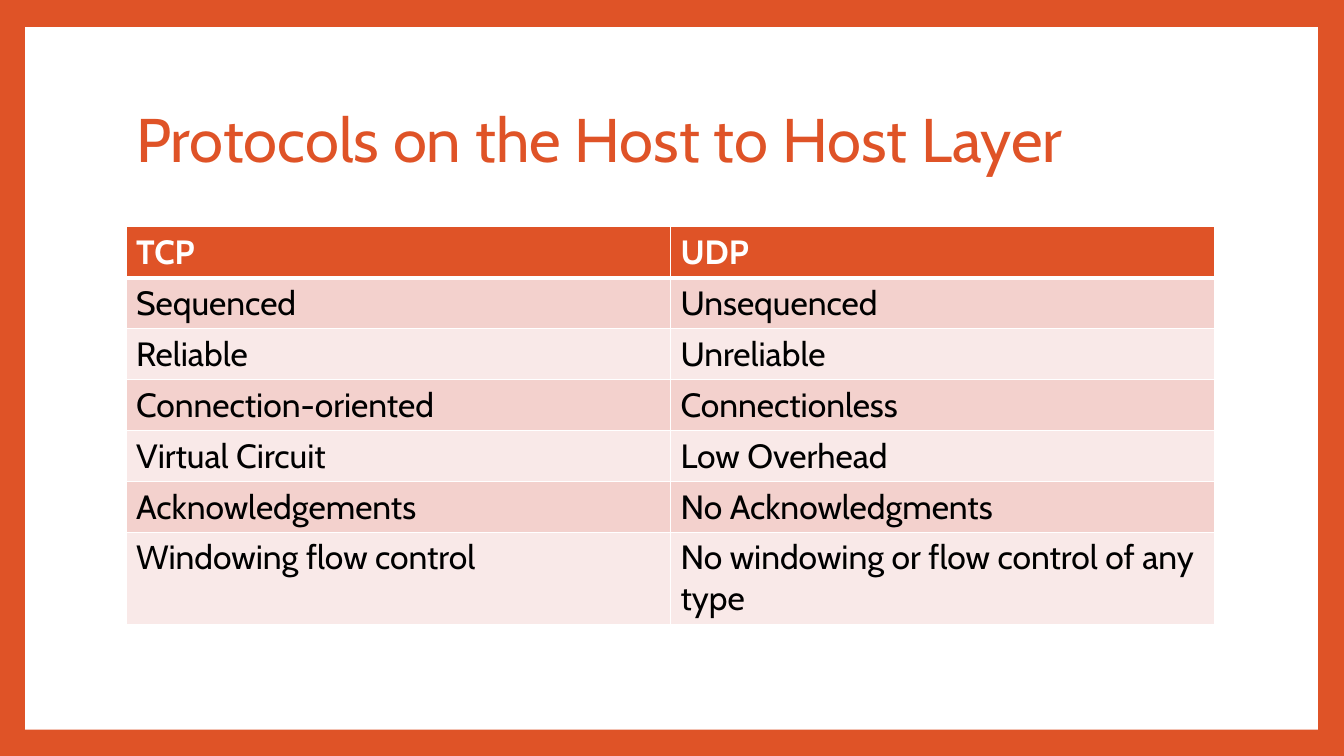
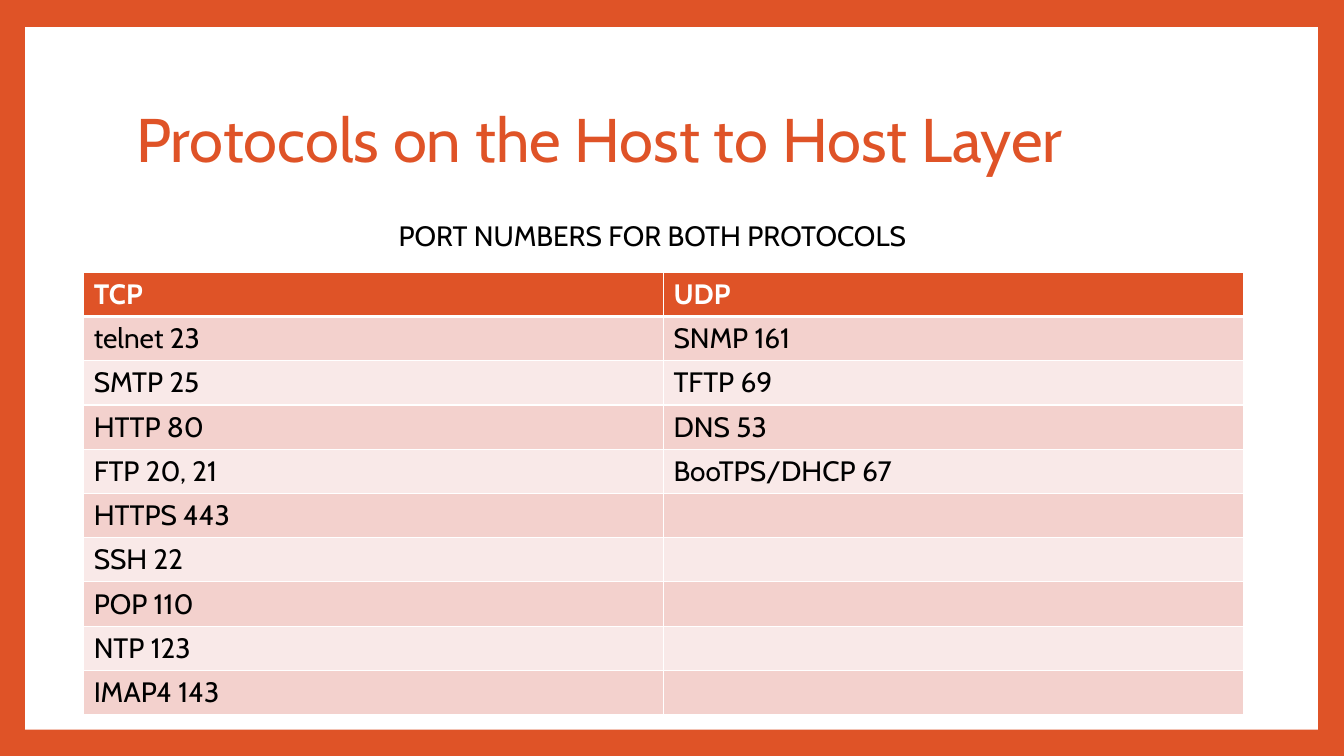
from dataclasses import dataclass
from typing import Optional

from lxml.etree import SubElement
from pptx import Presentation
from pptx.dml.color import RGBColor
from pptx.enum.shapes import MSO_SHAPE
from pptx.enum.text import MSO_ANCHOR, PP_ALIGN
from pptx.oxml.ns import qn
from pptx.util import Inches, Pt

FONT = "Cabin"
ORANGE, WHITE, BLACK = "DF5327", "FFFFFF", "000000"
BANDS = ("F3D1CD", "F9E9E8")
TITLE = "Protocols on the Host to Host Layer"


@dataclass(frozen=True)
class ProtocolTable:
    left: float
    top: float
    col_width: float
    row_height: float
    size: int
    rows: tuple[tuple[str, str], ...]
    caption: Optional[str] = None


TABLES = (
    ProtocolTable(1.25, 2.25, 5.4, 0.5, 24, (
        ("TCP", "UDP"),
        ("Sequenced", "Unsequenced"),
        ("Reliable", "Unreliable"),
        ("Connection-oriented", "Connectionless"),
        ("Virtual Circuit", "Low Overhead"),
        ("Acknowledgements", "No Acknowledgments"),
        ("Windowing flow control", "No windowing or flow control of any type"),
    )),
    ProtocolTable(0.83, 2.7, 5.75, 0.43, 20, (
        ("TCP", "UDP"),
        ("telnet 23", "SNMP 161"),
        ("SMTP 25", "TFTP 69"),
        ("HTTP 80", "DNS 53"),
        ("FTP 20, 21", "BooTPS/DHCP 67"),
        ("HTTPS 443", ""),
        ("SSH 22", ""),
        ("POP 110", ""),
        ("NTP 123", ""),
        ("IMAP4 143", ""),
    ), "PORT NUMBERS FOR BOTH PROTOCOLS"),
)


def rgb(color: str) -> RGBColor:
    return RGBColor.from_string(color)


def paint(obj, color: str) -> None:
    obj.fill.solid()
    obj.fill.fore_color.rgb = rgb(color)


def write(tf, text: str, size: int, color: str, bold: bool = False):
    p = tf.paragraphs[0]
    p.text = text
    p.font.name, p.font.size, p.font.bold = FONT, Pt(size), bold
    p.font.color.rgb = rgb(color)
    return p


def add_frame(layout, s) -> None:
    paint(layout.background, ORANGE)
    panel = s.shapes.add_shape(MSO_SHAPE.RECTANGLE, Inches(0.25), Inches(0.27),
                               Inches(12.82), Inches(6.97))
    panel.shadow.inherit = False
    paint(panel, WHITE)
    panel.line.fill.background()
    layout.shapes.element.insert(2, panel.element)


def add_title(s, text: str) -> None:
    sp = s.shapes.title
    sp.left, sp.top = Inches(1.25), Inches(0.67)
    sp.width, sp.height = Inches(10.8), Inches(1.48)
    tf = sp.text_frame
    tf.vertical_anchor = MSO_ANCHOR.MIDDLE
    p = write(tf, text, 44, ORANGE)
    p.alignment = PP_ALIGN.LEFT
    p.line_spacing = 0.9


def add_caption(s, text: str) -> None:
    sp = s.shapes.add_textbox(Inches(0.92), Inches(2.12), Inches(11.1), Inches(0.44))
    sp.text_frame.word_wrap = True
    write(sp.text_frame, text, 20, BLACK).alignment = PP_ALIGN.CENTER


def add_borders(cell, top: int, bottom: int) -> None:
    tc_pr = cell._tc.get_or_add_tcPr()
    for tag, width in (("lnL", 1), ("lnR", 1), ("lnT", top), ("lnB", bottom)):
        ln = SubElement(tc_pr, qn(f"a:{tag}"), w=str(Pt(width)))
        fill = SubElement(ln, qn("a:solidFill"))
        SubElement(fill, qn("a:srgbClr"), val=WHITE)


def add_protocols(s, spec: ProtocolTable) -> None:
    n, cols = len(spec.rows), len(spec.rows[0])
    table = s.shapes.add_table(n, cols, Inches(spec.left), Inches(spec.top),
                               Inches(cols * spec.col_width),
                               Inches(n * spec.row_height)).table
    for i, row in enumerate(spec.rows):
        table.rows[i].height = Inches(spec.row_height)
        header = i == 0
        for j, text in enumerate(row):
            cell = table.cell(i, j)
            add_borders(cell, 3 if i == 1 else 1, 3 if header else 1)
            paint(cell, ORANGE if header else BANDS[(i - 1) % 2])
            write(cell.text_frame, text, spec.size, WHITE if header else BLACK, header)


def main() -> None:
    prs = Presentation()
    prs.slide_width, prs.slide_height = Inches(13.33), Inches(7.5)
    layout = prs.slide_layouts[5]
    for i, spec in enumerate(TABLES):
        s = prs.slides.add_slide(layout)
        if i == 0:
            add_frame(layout, s)
        add_title(s, TITLE)
        add_protocols(s, spec)
        if spec.caption:
            add_caption(s, spec.caption)
    prs.save("out.pptx")


if __name__ == "__main__":
    main()
